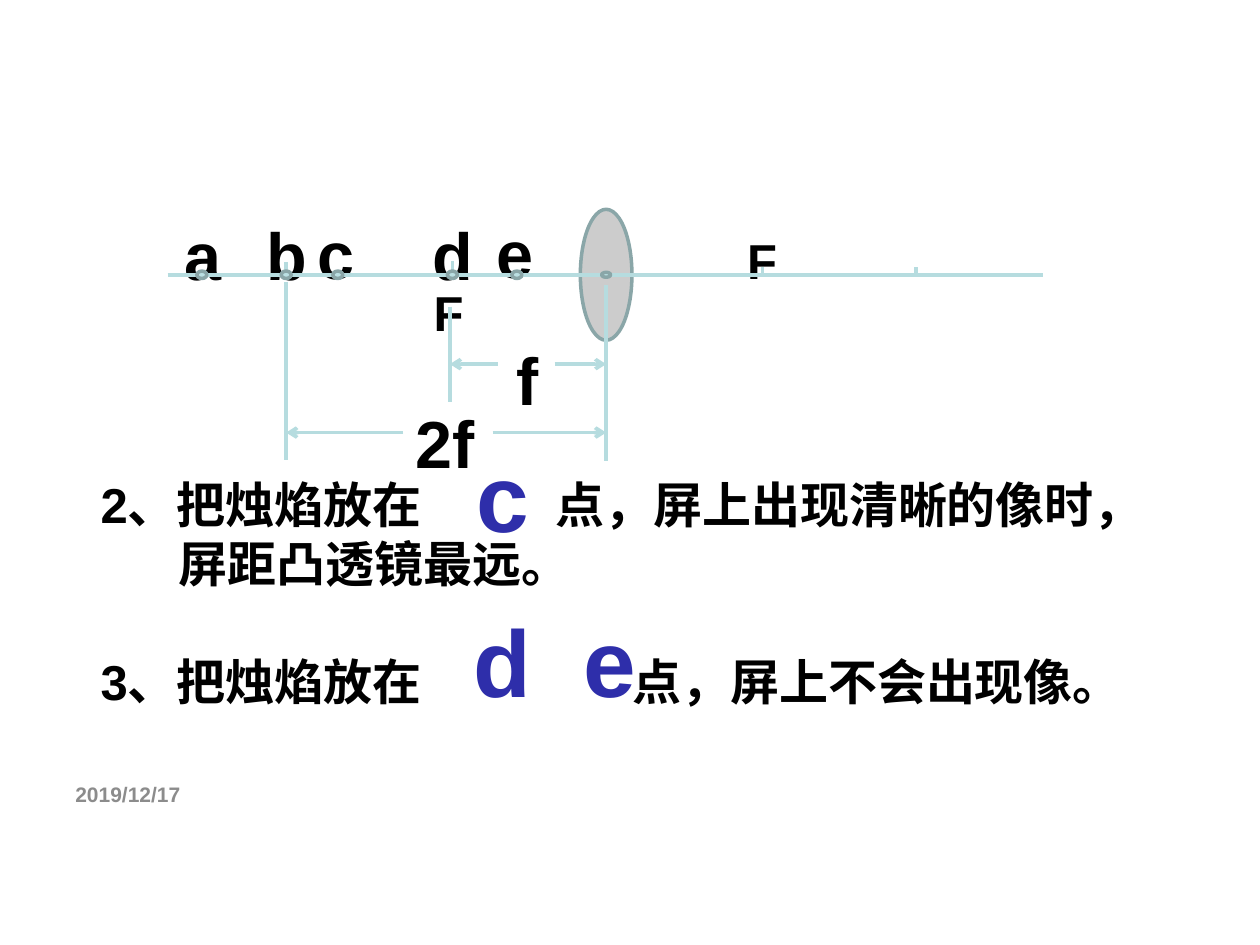
from lxml import etree
from pptx import Presentation
from pptx.dml.color import RGBColor
from pptx.enum.shapes import MSO_CONNECTOR as CONN, MSO_SHAPE as SHAPE
from pptx.enum.text import MSO_ANCHOR as ANCHOR, PP_ALIGN as ALIGN
from pptx.oxml.ns import qn
from pptx.util import Cm, Pt

COLORS = {"text": "000000", "date": "8C8C8C", "answer": "2E2EAA", "line": "B6DCDF",
          "outline": "8AA6A8", "dot": "BBE0E3", "lens": "CCCCCC"}


def rgb(name):
    return RGBColor.from_string(COLORS[name])


def style(p, size, color="text"):
    p.font.name = "Arial"
    p.font.size = Pt(size)
    p.font.bold = True
    p.font.color.rgb = rgb(color)


def add_text(shapes, text, x, y, w, h, size, color="text", anchor=ANCHOR.TOP,
             align=ALIGN.LEFT, wrap=True):
    tf = shapes.add_textbox(Cm(x), Cm(y), Cm(w), Cm(h)).text_frame
    tf.word_wrap = wrap
    tf.vertical_anchor = anchor
    p = tf.paragraphs[0]
    p.text = text
    p.alignment = align
    style(p, size, color)
    return tf


def add_ellipse(shapes, cx, cy, w, h, fill):
    sp = shapes.add_shape(SHAPE.OVAL, Cm(cx - w / 2), Cm(cy - h / 2), Cm(w), Cm(h))
    sp.shadow.inherit = False
    sp.fill.solid()
    sp.fill.fore_color.rgb = rgb(fill)
    sp.line.color.rgb = rgb("outline")
    sp.line.width = Pt(2)


def add_line(shapes, x1, y1, x2, y2, arrow=False):
    c = shapes.add_connector(CONN.STRAIGHT, Cm(x1), Cm(y1), Cm(x2), Cm(y2))
    c.line.color.rgb = rgb("line")
    c.line.width = Pt(2)
    if arrow:
        etree.SubElement(c.line._get_or_add_ln(), qn("a:tailEnd"), type="arrow")
    etree.SubElement(c._element.spPr, qn("a:effectLst"))


def lens_diagram(s, x, y):
    """Draw the lens and its axis, which starts at (x, y)."""
    shapes = s.shapes.add_group_shape().shapes
    centre, focus, double = x + 8.84, x + 5.74, x + 2.39
    add_ellipse(shapes, centre, y, 1.04, 2.64, "lens")

    # Letter: point on the axis, left and top of its label
    points = {"a": (0.69, 0.1, -1.35), "b": (2.39, 1.75, -1.35), "c": (3.43, 2.77, -1.37),
              "d": (5.74, 5.08, -1.35), "e": (7.04, 6.38, -1.4)}
    for letter, (_, left, top) in points.items():
        add_text(shapes, letter, x + left, y + top, 1.27, 1.88, 38)
    for left, top in ((11.43, -1.02), (5.11, 0.03)):
        add_text(shapes, "F", x + left, y + top, 1.04, 1.45, 28)
    add_text(shapes, "f", x + 6.78, y + 1.17, 1.02, 1.88, 38)
    add_text(shapes, "2f", x + 4.75, y + 2.44, 1.78, 1.88, 38)

    add_line(shapes, x, y, x + 17.65, y)
    for tick, height in ((double, 0.25), (focus, 0.28), (x + 11.99, 0.15), (x + 15.09, 0.15)):
        add_line(shapes, tick, y - height, tick, y)
    for guide, top, bottom in ((double, 0.15, 3.73), (focus - 0.05, 0.64, 2.57),
                               (centre, 0.2, 3.76)):
        add_line(shapes, guide, y + top, guide, y + bottom)
    for drop, left, gap_left, gap_right in ((1.8, focus - 0.05, 6.65, 7.8),
                                            (3.18, double, 4.75, 6.55)):
        add_line(shapes, x + gap_left, y + drop, left, y + drop, arrow=True)
        add_line(shapes, x + gap_right, y + drop, centre, y + drop, arrow=True)

    for offset, _, _ in points.values():
        add_ellipse(shapes, x + offset, y, 0.2, 0.15, "dot")
    add_ellipse(shapes, centre, y, 0.18, 0.1, "dot")


def add_blank_line(p, before, after, stop):
    """Fill a paragraph with a blank that is underlined up to a tab stop."""
    for text, underline in ((before, False), ("\t", True), (after, False)):
        r = p.add_run()
        r.text = text
        r.font.underline = underline
    tabs = etree.SubElement(p._p.get_or_add_pPr(), qn("a:tabLst"))
    etree.SubElement(tabs, qn("a:tab"), pos=str(Cm(stop)), algn="l")


def questions(s, x, y, w, h):
    tf = add_text(s.shapes, "", x, y, w, h, 28, anchor=ANCHOR.MIDDLE)
    second, rest, third = tf.paragraphs[0], tf.add_paragraph(), tf.add_paragraph()
    for p in (rest, third):
        style(p, 28)
    third.space_before = Pt(34)
    add_blank_line(second, "2、把烛焰放在", "点，屏上出现清晰的像时，", 9.17)
    rest.text = "屏距凸透镜最远。"
    rest._p.get_or_add_pPr().set("marL", str(Cm(1.57)))
    add_blank_line(third, "3、把烛焰放在 ", "点，屏上不会出现像。", 10.72)

    for text, left, top, width in (("c", 7.57, -0.71, 1.57), ("d  e", 7.49, 2.62, 3.84)):
        add_text(s.shapes, text, x + left, y + top, width, 2.57, 54, "answer",
                 align=ALIGN.CENTER, wrap=False)


def main():
    prs = Presentation()
    prs.slide_width, prs.slide_height = Cm(25.4), Cm(19.05)
    s = prs.slides.add_slide(prs.slide_layouts[6])
    add_text(s.shapes, "2019/12/17", 1.27, 15.62, 5.92, 0.76, 12, "date", ANCHOR.MIDDLE)
    lens_diagram(s, 3.38, 5.54)
    questions(s, 1.78, 9.42, 22.15, 5.05)
    prs.save("out.pptx")


if __name__ == "__main__":
    main()
